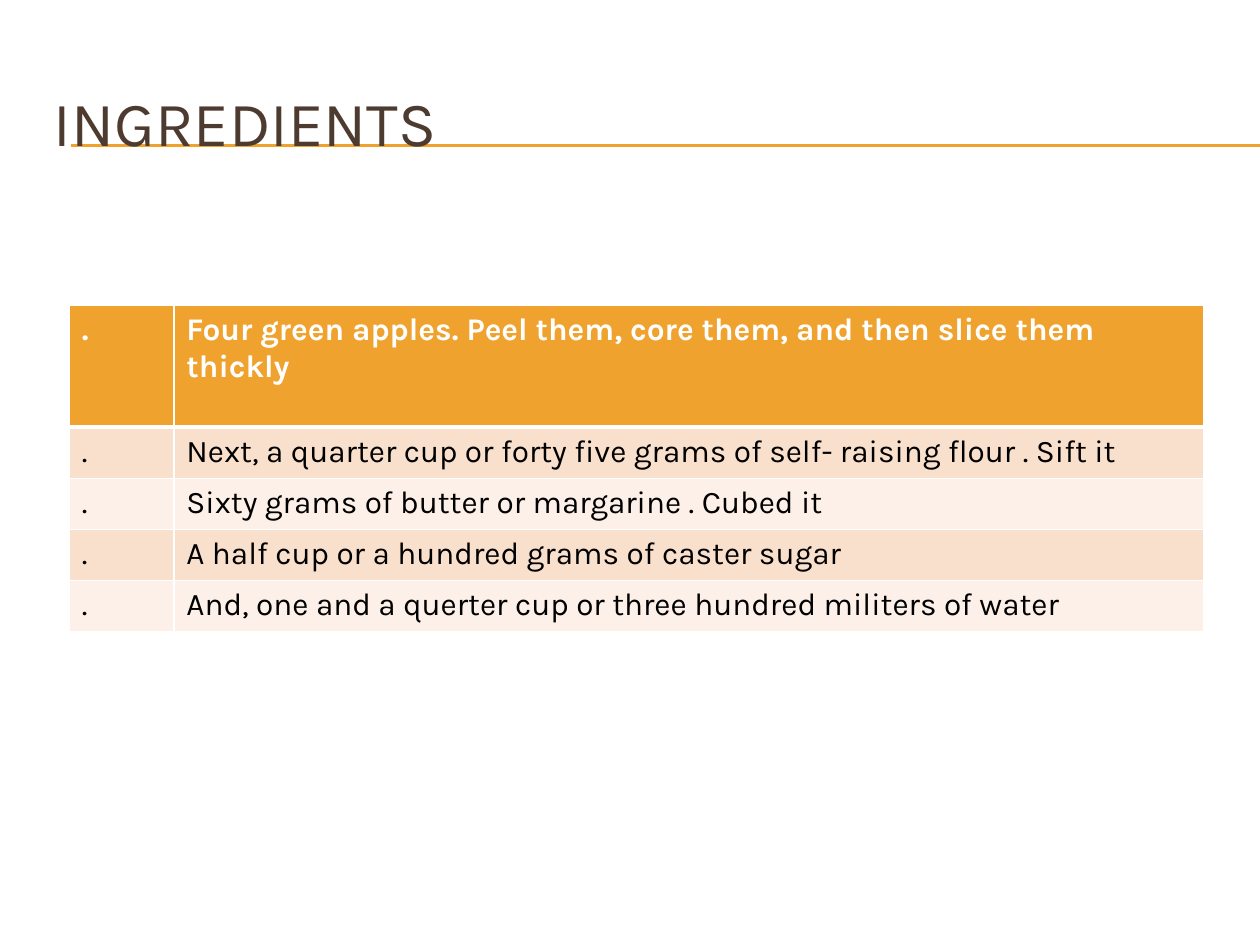
import lxml.etree
import pptx
import pptx.dml.color
import pptx.enum.shapes
import pptx.enum.text
import pptx.oxml.ns
import pptx.util

ORANGE = pptx.dml.color.RGBColor(0xF0, 0xA2, 0x2E)
BROWN = pptx.dml.color.RGBColor(0x4E, 0x3B, 0x30)
PEACH = pptx.dml.color.RGBColor(0xF9, 0xE0, 0xCD)
CREAM = pptx.dml.color.RGBColor(0xFC, 0xF0, 0xE8)
WHITE = pptx.dml.color.RGBColor(0xFF, 0xFF, 0xFF)
BLACK = pptx.dml.color.RGBColor(0, 0, 0)

INGREDIENTS = [
    "Four green apples. Peel them, core them, and then slice them thickly",
    "Next, a quarter cup or forty five grams of self- raising flour . Sift it",
    "Sixty grams of butter or margarine . Cubed it",
    "A half cup or a hundred grams of caster sugar",
    "And, one and a querter cup or three hundred militers of water",
]


class SlideBuilder:
    """Draw styled elements on a slide, measured on a grid of 100 columns by 75 rows."""

    font = "Karla"
    unit = pptx.util.Inches(0.1)

    def __init__(self, presentation):
        self.slide = presentation.slides.add_slide(presentation.slide_layouts[6])

    def grid(self, *counts):
        return [round(count * self.unit) for count in counts]

    def format_text(self, text_frame, size, color, bold=False):
        for paragraph in text_frame.paragraphs:
            for run in paragraph.runs:
                run.font.name = self.font
                run.font.size = pptx.util.Pt(size)
                run.font.bold = bold
                run.font.color.rgb = color

    def title(self, text, left, top, width, height):
        shape = self.slide.shapes.add_textbox(*self.grid(left, top, width, height))
        text_frame = shape.text_frame
        text_frame.word_wrap = True
        text_frame.vertical_anchor = pptx.enum.text.MSO_ANCHOR.MIDDLE
        text_frame.text = text
        self.format_text(text_frame, 36, BROWN)

    def rule(self, left, right, row):
        connector = self.slide.shapes.add_connector(
            pptx.enum.shapes.MSO_CONNECTOR.STRAIGHT, *self.grid(left, row, right, row)
        )
        connector.line.color.rgb = ORANGE
        connector.line.width = pptx.util.Pt(0.75)
        properties = connector._element.spPr
        lxml.etree.SubElement(properties, pptx.oxml.ns.qn("a:effectLst"))

    def border(self, cell, side, width):
        properties = cell._tc.get_or_add_tcPr()
        line = lxml.etree.SubElement(properties, pptx.oxml.ns.qn(f"a:ln{side}"))
        line.set("w", str(pptx.util.Pt(width)))
        fill = lxml.etree.SubElement(line, pptx.oxml.ns.qn("a:solidFill"))
        color = lxml.etree.SubElement(fill, pptx.oxml.ns.qn("a:srgbClr"))
        color.set("val", str(WHITE))

    def table(self, rows, left, top, widths, heights):
        frame = self.slide.shapes.add_table(
            len(rows), len(widths), *self.grid(left, top, sum(widths), sum(heights))
        )
        table = frame.table
        for column, width in zip(table.columns, self.grid(*widths)):
            column.width = width
        for row, height in zip(table.rows, self.grid(*heights)):
            row.height = height
        for row_index, texts in enumerate(rows):
            header = row_index == 0
            fill = ORANGE if header else (CREAM, PEACH)[row_index % 2]
            top_width = 3 if row_index == 1 else 1
            bottom_width = 3 if header else 1
            for column_index, text in enumerate(texts):
                cell = table.cell(row_index, column_index)
                cell.text_frame.text = text
                self.format_text(cell.text_frame, 18, WHITE if header else BLACK, header)
                for side, width in zip("LRTB", (1, 1, top_width, bottom_width)):
                    self.border(cell, side, width)
                cell.fill.solid()
                cell.fill.fore_color.rgb = fill


def main():
    presentation = pptx.Presentation()
    presentation.slide_width = pptx.util.Inches(10)
    presentation.slide_height = pptx.util.Inches(7.5)
    builder = SlideBuilder(presentation)
    for row in (11.5, 11.6):
        builder.rule(5.6, 100, row)
    builder.title("INGREDIENTS", 3.3, 5, 95, 9.2)
    rows = [(".", ingredient) for ingredient in INGREDIENTS]
    builder.table(rows, 5.5, 24.2, (8.3, 81.7), (9.7, *[4.06] * 4))
    presentation.save("out.pptx")


if __name__ == "__main__":
    main()
